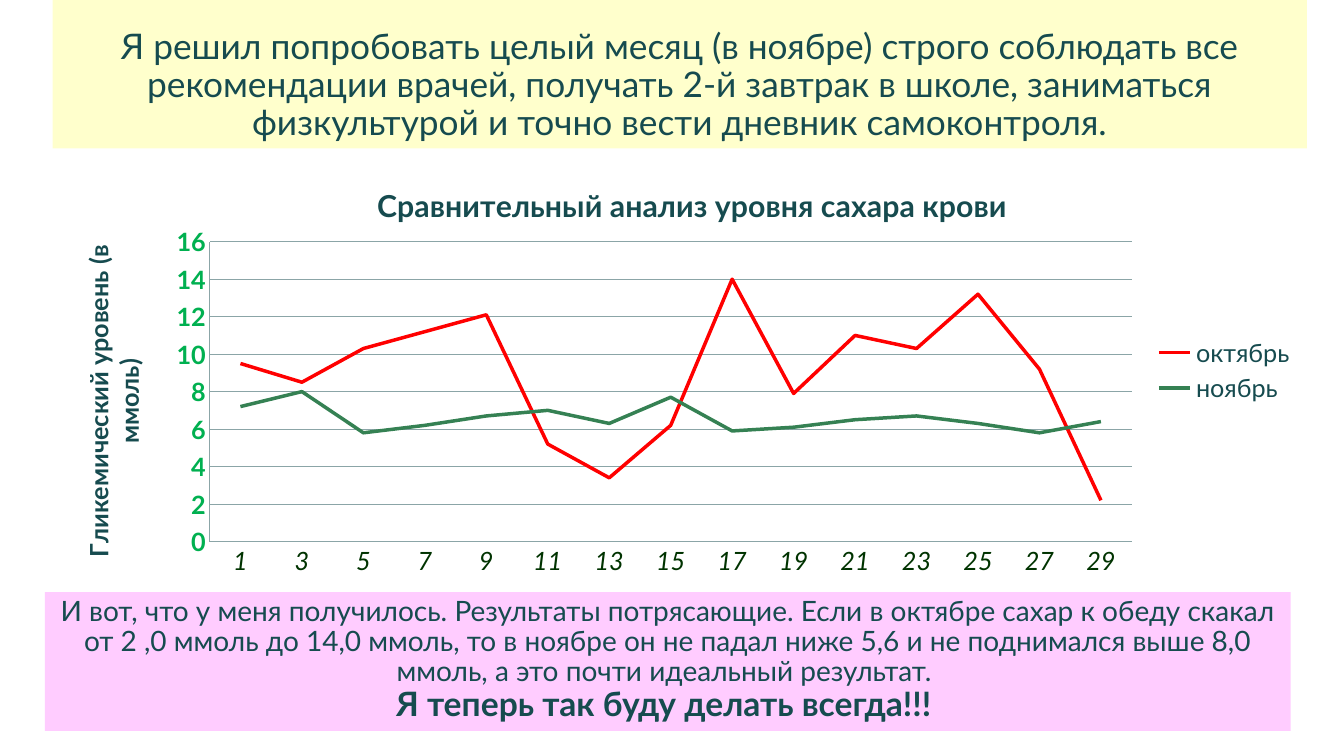
from lxml import etree
from pptx import Presentation
from pptx.chart.data import CategoryChartData
from pptx.dml.color import RGBColor
from pptx.enum.chart import XL_CHART_TYPE, XL_LEGEND_POSITION, XL_TICK_MARK
from pptx.enum.shapes import MSO_SHAPE
from pptx.enum.text import MSO_ANCHOR, PP_ALIGN
from pptx.oxml import parse_xml
from pptx.oxml.ns import nsdecls
from pptx.util import Pt

FONT = "Lato"
TEAL = "164B4F"
GRID = "8BA5A7"

INTRO = ("Я решил попробовать целый месяц (в ноябре) строго соблюдать все "
         "рекомендации врачей, получать 2-й завтрак в школе, заниматься "
         "физкультурой и точно вести дневник самоконтроля.")
RESULT = ("И вот, что у меня получилось. Результаты потрясающие. Если в октябре "
          "сахар к обеду скакал от 2 ,0 ммоль до 14,0 ммоль, то в ноябре он не "
          "падал ниже 5,6 и не поднимался выше 8,0 ммоль, а это почти идеальный "
          "результат. ")
PROMISE = "Я теперь так буду делать всегда!!! "

DAYS = [str(day) for day in range(1, 30, 2)]
SERIES = [
    ("октябрь", "FF0000", [9.5, 8.5, 10.3, 11.2, 12.1, 5.2, 3.4, 6.2, 14,
                           7.9, 11, 10.3, 13.2, 9.2, 2.2]),
    ("ноябрь", "358153", [7.2, 8, 5.8, 6.2, 6.7, 7, 6.3, 7.7, 5.9,
                          6.1, 6.5, 6.7, 6.3, 5.8, 6.4]),
]


def rgb(value):
    return RGBColor.from_string(value)


def style_font(font, size, color=TEAL, bold=False, italic=False):
    font.name = FONT
    font.size = Pt(size)
    font.bold = bold
    font.italic = italic
    font.color.rgb = rgb(color)


def style_line(line, color, width):
    line.color.rgb = rgb(color)
    line.width = Pt(width)


def add_panel(slide, left, top, width, height, fill, anchor, paragraphs):
    """Filled box with centred paragraphs given as (text, size, bold)."""
    sp = slide.shapes.add_shape(MSO_SHAPE.RECTANGLE, Pt(left), Pt(top),
                                Pt(width), Pt(height))
    sp.shadow.inherit = False
    sp.fill.solid()
    sp.fill.fore_color.rgb = rgb(fill)
    sp.line.fill.background()
    tf = sp.text_frame
    tf.word_wrap = True
    tf.vertical_anchor = anchor
    for i, (text, size, bold) in enumerate(paragraphs):
        p = tf.add_paragraph() if i else tf.paragraphs[0]
        p.text = text
        p.alignment = PP_ALIGN.CENTER
        p.line_spacing = 0.9
        style_font(p.runs[0].font, size, bold=bold)


def set_title(owner, text, size):
    """Title of a chart or an axis."""
    owner.has_title = True
    tf = (owner.chart_title if hasattr(owner, "chart_title")
          else owner.axis_title).text_frame
    tf.text = text
    style_font(tf.paragraphs[0].runs[0].font, size, bold=True)


def set_layout(element, inner=False, **fractions):
    """Place a chart part by fractions of the chart area."""
    for old in element.findall("{*}layout"):
        element.remove(old)
    modes = {"xMode": "edge", "yMode": "edge", **fractions}
    if inner:
        modes = {"layoutTarget": "inner", **modes}
    parts = "".join(f'<c:{tag} val="{val}"/>' for tag, val in modes.items())
    layout = parse_xml(f'<c:layout {nsdecls("c")}><c:manualLayout>{parts}'
                       '</c:manualLayout></c:layout>')
    text = element.find("{*}tx")
    if text is None:
        element.insert(0, layout)
    else:
        text.addnext(layout)


def style_axis(axis, color, bold=False, italic=False):
    axis.major_tick_mark = axis.minor_tick_mark = XL_TICK_MARK.NONE
    style_font(axis.tick_labels.font, 18, color, bold, italic)
    style_line(axis.format.line, GRID, 0.75)


def add_sugar_chart(slide, left, top, width, height):
    data = CategoryChartData()
    data.categories = DAYS
    for name, _, values in SERIES:
        data.add_series(name, values)
    chart = slide.shapes.add_chart(XL_CHART_TYPE.LINE, Pt(left), Pt(top),
                                   Pt(width), Pt(height), data).chart
    style_font(chart.font, 18)

    # Titles and legend
    set_title(chart, "Сравнительный анализ уровня сахара крови", 21.6)
    chart.chart_title.include_in_layout = False
    set_layout(chart.chart_title._element, x=0.25, y=0.05)
    chart.has_legend = True
    chart.legend.position = XL_LEGEND_POSITION.RIGHT
    chart.legend.include_in_layout = False
    style_font(chart.legend.font, 18)

    # Axes
    style_axis(chart.category_axis, "003300", italic=True)
    axis = chart.value_axis
    style_axis(axis, "00B050", bold=True)
    set_title(axis, "Гликемический уровень (в ммоль)", 18)
    axis.minimum_scale, axis.maximum_scale, axis.major_unit = 0, 16, 2
    axis.has_major_gridlines = True
    style_line(axis.major_gridlines.format.line, GRID, 0.75)

    # Lines
    plot = chart.plots[0]
    plot.vary_by_categories = False
    for series, (_, color, _) in zip(plot.series, SERIES):
        series.smooth = False
        style_line(series.format.line, color, 2.5)
    plot_area = chart._chartSpace.chart.plotArea
    set_layout(plot_area, inner=True, x=0.12, y=0.2, w=0.74, h=0.7)


def main():
    prs = Presentation()
    prs.slide_width, prs.slide_height = Pt(960), Pt(540)
    slide = prs.slides.add_slide(prs.slide_layouts[6])

    # Intro, chart, conclusion
    add_panel(slide, 37.5, 0, 896, 106, "FFFFCC", MSO_ANCHOR.BOTTOM,
              [(INTRO, 25.2, False)])
    add_sugar_chart(slide, 43, 111.5, 890, 306)
    add_panel(slide, 32, 423, 890, 99, "FFCCFF", MSO_ANCHOR.TOP,
              [(RESULT, 20, False), (PROMISE, 24, True)])

    prs.save("out.pptx")


if __name__ == "__main__":
    main()
